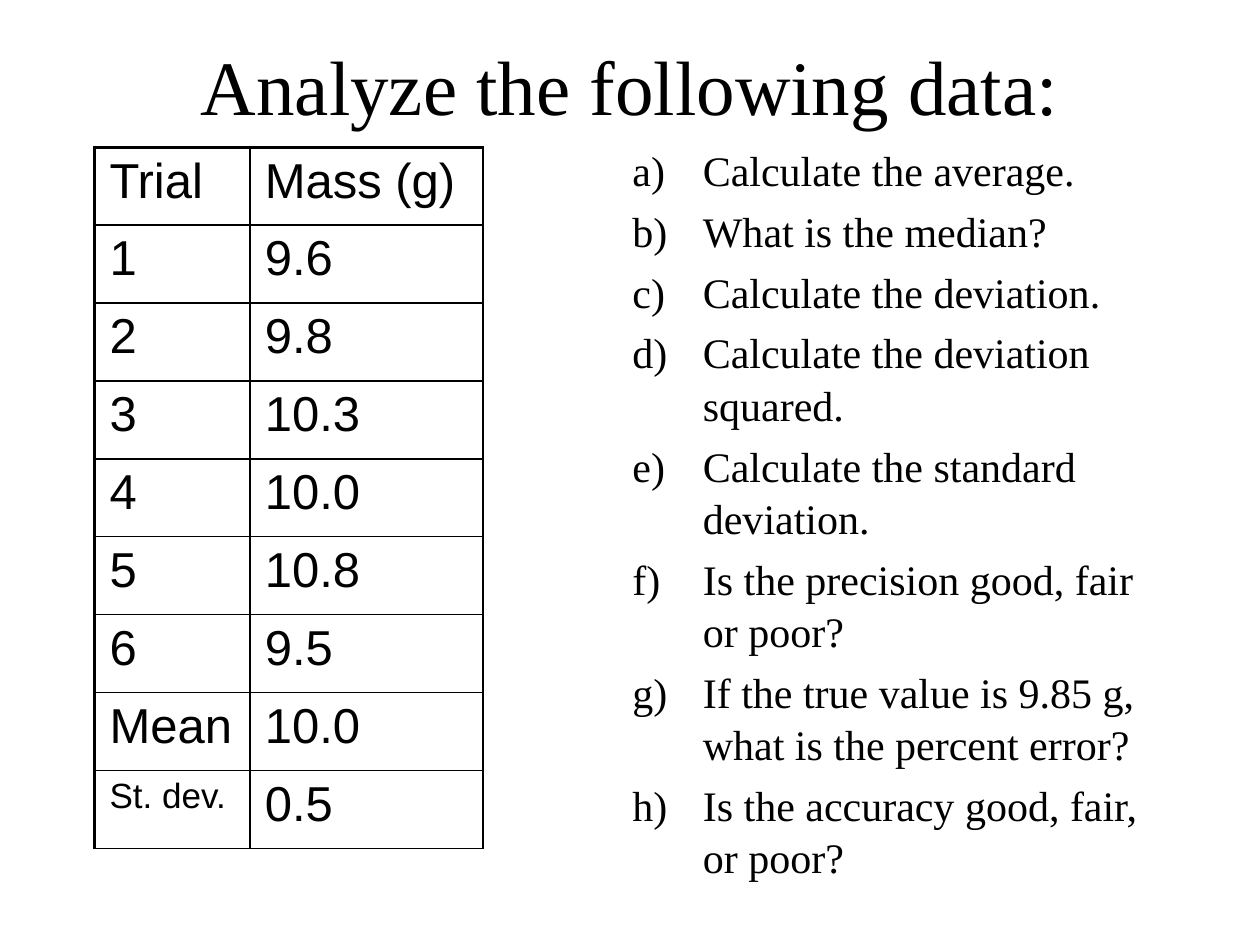
from dataclasses import dataclass
from lxml.etree import SubElement
from pptx import Presentation
from pptx.dml.color import RGBColor
from pptx.enum.text import MSO_ANCHOR, PP_ALIGN
from pptx.oxml.ns import qn
from pptx.util import Cm, Pt

BLACK = RGBColor(0, 0, 0)
THIN, THICK = Pt(1), Pt(2.25)

DATA = [
    ("Trial", "Mass (g)"),
    ("1", "9.6"),
    ("2", "9.8"),
    ("3", "10.3"),
    ("4", "10.0"),
    ("5", "10.8"),
    ("6", "9.5"),
    ("Mean", "10.0"),
    ("St. dev.", "0.5"),
]
TASKS = [
    "Calculate the average.",
    "What is the median?",
    "Calculate the deviation.",
    "Calculate the deviation squared.",
    "Calculate the standard deviation.",
    "Is the precision good, fair or poor?",
    "If the true value is 9.85 g, what is the percent error?",
    "Is the accuracy good, fair, or poor?",
]


def write(para, text, *, size, font, align=PP_ALIGN.LEFT, before=0, line=None):
    """Put formatted text in a paragraph."""
    run = para.add_run()
    run.text = text
    run.font.size = Pt(size)
    run.font.name = font
    run.font.color.rgb = BLACK
    para.alignment = align
    para.space_before = Pt(before)
    para.line_spacing = line


def number(para, indent):
    """Give a paragraph an a), b), c) number on a hanging indent."""
    props = para._p.get_or_add_pPr()
    props.set("marL", str(indent))
    props.set("indent", str(-indent))
    SubElement(props, qn("a:buFont"), typeface="Times New Roman")
    SubElement(props, qn("a:buAutoNum"), type="alphaLcParenR")


def border(cell, widths):
    """Draw the four sides of a cell; the fill must be set afterwards."""
    props = cell._tc.get_or_add_tcPr()
    for side, width in widths.items():
        line = SubElement(props, qn(f"a:ln{side}"), w=str(width))
        fill = SubElement(line, qn("a:solidFill"))
        SubElement(fill, qn("a:srgbClr"), val=str(BLACK))


@dataclass
class Page:
    slide: object
    serif: str = "Times New Roman"
    sans: str = "Arial"

    def title(self, text, left, top, width, height):
        shape = self.slide.shapes.title
        shape.left, shape.top = left, top
        shape.width, shape.height = width, height
        frame = shape.text_frame
        frame.word_wrap = True
        frame.vertical_anchor = MSO_ANCHOR.MIDDLE
        write(frame.paragraphs[0], text, size=44, font=self.serif,
              align=PP_ALIGN.CENTER)

    def items(self, texts, left, top, width, height):
        frame = self.slide.shapes.add_textbox(left, top, width, height).text_frame
        frame.word_wrap = True
        for i, text in enumerate(texts):
            para = frame.add_paragraph() if i else frame.paragraphs[0]
            write(para, text, size=24, font=self.serif, before=4.8, line=1.04)
            number(para, Cm(1.42))

    def table(self, data, left, top, widths, height):
        frame = self.slide.shapes.add_table(
            len(data), len(widths), left, top, sum(widths), height * len(data))
        table = frame.table
        table.first_row = table.horz_banding = False
        for col, width in zip(table.columns, widths):
            col.width = width
        for r, row in enumerate(data):
            table.rows[r].height = height
            for c, text in enumerate(row):
                cell = table.cell(r, c)
                cell.margin_left = cell.margin_right = Cm(0.3)
                cell.margin_top = cell.margin_bottom = Cm(0.13)
                border(cell, {"L": THIN if c else THICK, "R": THIN,
                              "T": THIN if r else THICK, "B": THIN})
                cell.fill.background()
                write(cell.text_frame.paragraphs[0], text, font=self.sans,
                      size=20 if text == "St. dev." else 28, before=5.6)


def main():
    prs = Presentation()
    prs.slide_width, prs.slide_height = Cm(25.4), Cm(19.05)
    page = Page(prs.slides.add_slide(prs.slide_layouts[5]))

    # Heading
    page.title("Analyze the following data:", Cm(1.9), Cm(0.85), Cm(21.6), Cm(1.7))
    # Questions on the right
    page.items(TASKS, Cm(12.5), Cm(2.75), Cm(11.43), Cm(15.03))
    # Measurements on the left
    page.table(DATA, Cm(1.91), Cm(2.97), [Cm(3.13), Cm(4.7)], Cm(1.57))

    prs.save("out.pptx")


if __name__ == "__main__":
    main()
